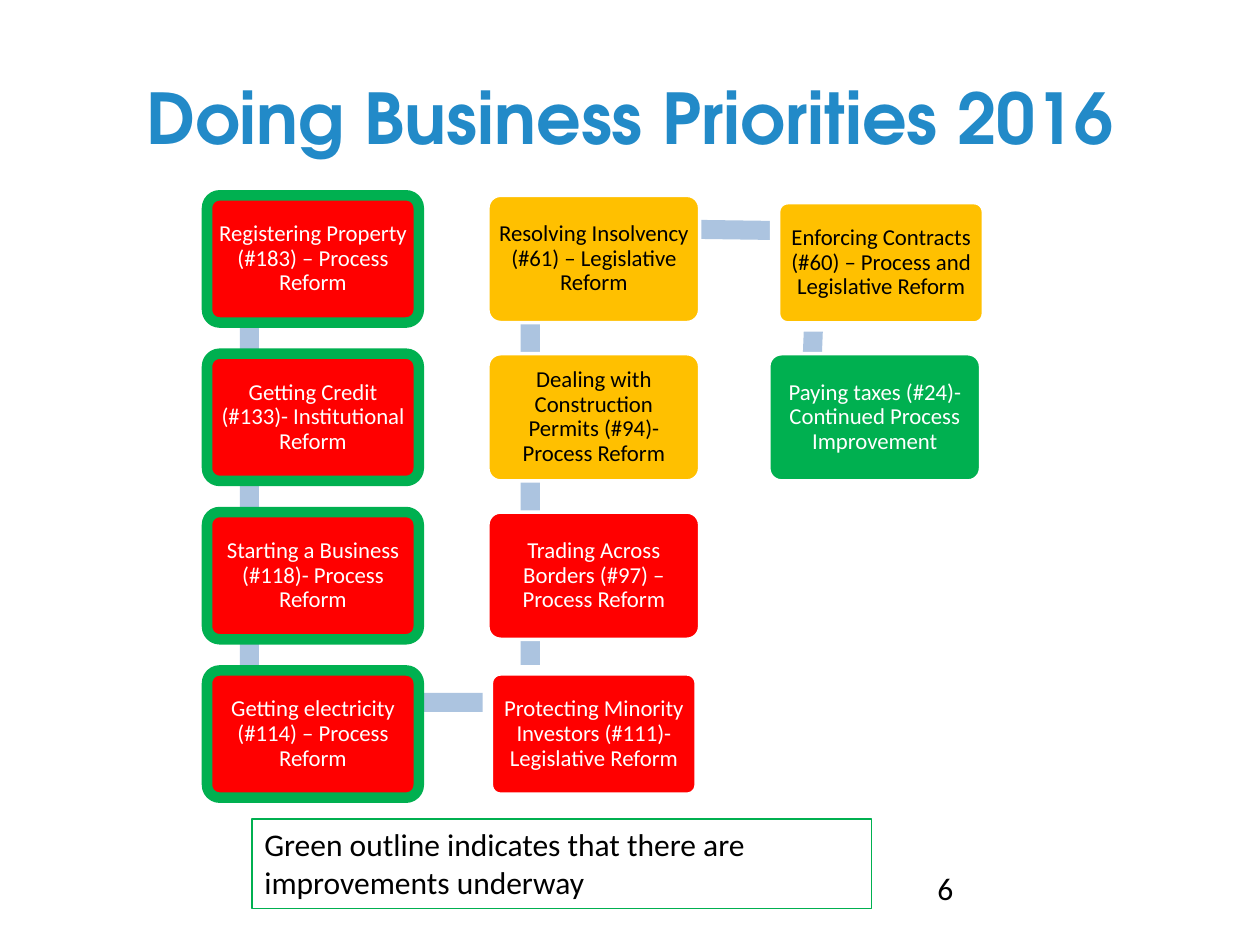
from math import atan2, degrees, hypot

from pptx import Presentation
from pptx.dml.color import RGBColor
from pptx.enum.shapes import MSO_SHAPE as Kind
from pptx.enum.text import MSO_ANCHOR as Anchor, PP_ALIGN as Align
from pptx.util import Pt

BLACK = RGBColor(0, 0, 0)
WHITE = RGBColor(255, 255, 255)
RED = RGBColor(255, 0, 0)
AMBER = RGBColor(255, 192, 0)
GREEN = RGBColor(0, 176, 80)
PALE = RGBColor(172, 196, 224)
BLUE = RGBColor(34, 138, 200)

LEFTS = (118.3, 278.8, 439.3)
TOP, STEP = 111.6, 90.5
WIDE, HIGH = 121, 72.7
PIN_X, PIN_Y, THICK = 24.2, 18.2, 10.9

# Text, column, row, fill, outline, outline width, in order of priority
CARDS = (
    ("Registering Property (#183) – Process Reform", 0, 0, RED, GREEN, 6),
    ("Getting Credit (#133)- Institutional Reform", 0, 1, RED, GREEN, 6),
    ("Starting a Business (#118)- Process Reform", 0, 2, RED, GREEN, 6),
    ("Getting electricity (#114) – Process Reform", 0, 3, RED, GREEN, 6),
    ("Protecting Minority Investors (#111)- Legislative Reform", 1, 3, RED, WHITE, 6),
    ("Trading Across Borders (#97) – Process Reform", 1, 2, RED, WHITE, 2),
    ("Dealing with Construction Permits (#94)- Process Reform", 1, 1, AMBER, WHITE, 2),
    ("Resolving Insolvency (#61) – Legislative Reform", 1, 0, AMBER, WHITE, 2),
    ("Enforcing Contracts (#60) – Process and Legislative Reform", 2, 0, AMBER, WHITE, 6),
    ("Paying taxes (#24)- Continued Process Improvement", 2, 1, GREEN, WHITE, 2),
)
SHIFTS = {(2, 0): (3.6, 2.2)}  # the one card set off the grid


def write(shape, text, size, color=BLACK, font="Calibri", bold=False,
          align=Align.LEFT, anchor=Anchor.TOP, inset=None, space=None):
    frame = shape.text_frame
    frame.word_wrap = True
    frame.vertical_anchor = anchor
    if inset is not None:
        frame.margin_left = frame.margin_right = Pt(inset)
        frame.margin_top = frame.margin_bottom = Pt(inset)
    para = frame.paragraphs[0]
    para.alignment = align
    para.line_spacing = space
    run = para.add_run()
    run.text = text
    run.font.name, run.font.size, run.font.bold = font, Pt(size), bold
    run.font.color.rgb = color


def draw(slide, kind, x, y, w, h, fill=None, line=None, width=1):
    shape = slide.shapes.add_shape(kind, Pt(x), Pt(y), Pt(w), Pt(h))
    shape.shadow.inherit = False
    if fill is None:
        shape.fill.background()
    else:
        shape.fill.solid()
        shape.fill.fore_color.rgb = fill
    if line is None:
        shape.line.fill.background()
    else:
        shape.line.color.rgb = line
        shape.line.width = Pt(width)
    return shape


def place(col, row):
    """Return the left and top of the card in a grid cell."""
    dx, dy = SHIFTS.get((col, row), (0, 0))
    return LEFTS[col] + dx, TOP + STEP * row + dy


def link(slide, start, end):
    """Draw a bar between the pin points of two cards."""
    dx, dy = end[0] - start[0], end[1] - start[1]
    size = hypot(dx, dy)
    x = start[0] + PIN_X + (dx - size) / 2
    y = start[1] + PIN_Y + (dy - THICK) / 2
    bar = draw(slide, Kind.RECTANGLE, x, y, size, THICK, PALE)
    bar.rotation = round(degrees(atan2(dy, dx)), 1)


def card(slide, text, spot, fill, line, width):
    shape = draw(slide, Kind.ROUNDED_RECTANGLE, *spot, WIDE, HIGH, fill, line, width)
    shape.adjustments[0] = 0.1
    write(shape, text, 13, BLACK if fill == AMBER else WHITE, align=Align.CENTER,
          anchor=Anchor.MIDDLE, inset=3.6, space=0.9)


def flow(slide):
    spots = [place(col, row) for _, col, row, *_ in CARDS]
    for i, (text, _, _, fill, line, width) in enumerate(CARDS):
        if i + 1 < len(spots):
            link(slide, spots[i], spots[i + 1])
        card(slide, text, spots[i], fill, line, width)


def head(slide, text):
    title = slide.shapes.title
    title.left, title.top, title.width, title.height = Pt(36), Pt(21.6), Pt(648), Pt(90)
    write(title, text, 40, BLUE, "TeX Gyre Adventor", True, Align.CENTER, Anchor.MIDDLE)


def main():
    deck = Presentation()
    deck.slide_width, deck.slide_height = Pt(720), Pt(540)
    slide = deck.slides.add_slide(deck.slide_layouts[5])
    head(slide, "Doing Business Priorities 2016")
    flow(slide)
    note = draw(slide, Kind.RECTANGLE, 144, 468, 354, 51, line=GREEN, width=0.75)
    write(note, "Green outline indicates that there are improvements underway", 18)
    page = slide.shapes.add_textbox(Pt(528.5), Pt(493), Pt(165), Pt(29))
    write(page, "6", 18)
    deck.save("out.pptx")


if __name__ == "__main__":
    main()
